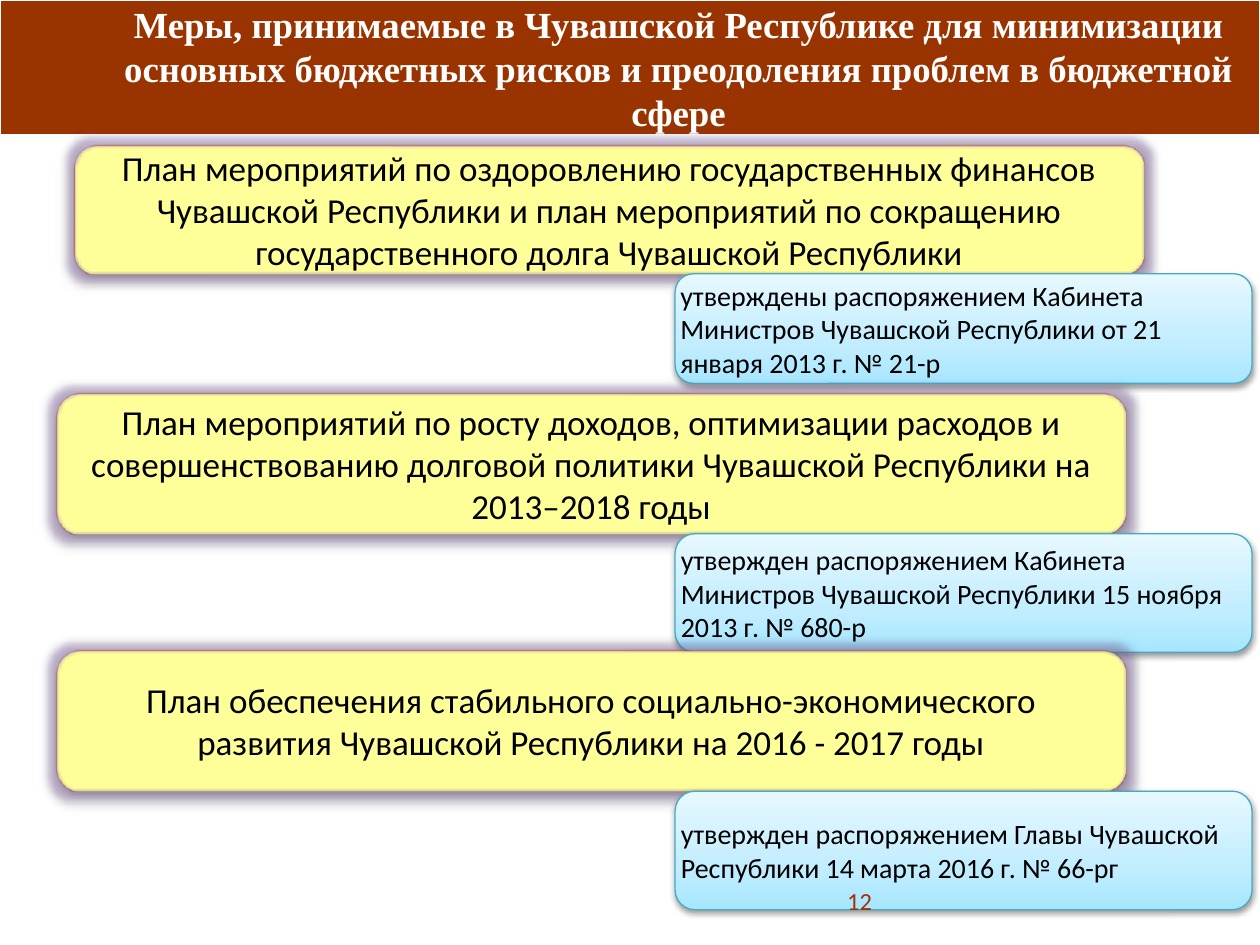
import copy

import lxml.etree
import pptx
import pptx.dml.color
import pptx.enum.shapes
import pptx.enum.text
import pptx.oxml
import pptx.oxml.ns
import pptx.util

Cm, Pt = pptx.util.Cm, pptx.util.Pt
RGBColor = pptx.dml.color.RGBColor
SHAPE = pptx.enum.shapes.MSO_SHAPE
ALIGN = pptx.enum.text.PP_ALIGN
qn = pptx.oxml.ns.qn

BROWN = RGBColor(0x99, 0x33, 0x00)
NUMBER_BROWN = RGBColor(0xA0, 0x32, 0x02)
WHITE = RGBColor(0xFF, 0xFF, 0xFF)
BLACK = RGBColor(0, 0, 0)
YELLOW = RGBColor(0xFF, 0xFF, 0x99)
RED_LINE = RGBColor(0xBF, 0x4C, 0x48)
BLUE_LINE = RGBColor(0x46, 0xAA, 0xC5)
GLOW = RGBColor(0x80, 0x64, 0xA2)
BLUE_STOPS = [(0, RGBColor(0xA7, 0xE6, 0xFF)),
              (0.35, RGBColor(0xC1, 0xED, 0xFF)),
              (1, RGBColor(0xE7, 0xF8, 0xFF))]

PLAN_WIDTH, DECREE_WIDTH = 21.56, 11.63

# left, top, plan height, decree height (cm), plan, decree
MEASURES = [
    (1.5, 2.92, 2.6, 2.21,
     "План мероприятий по оздоровлению государственных финансов Чувашской "
     "Республики и план мероприятий по сокращению государственного долга "
     "Чувашской Республики",
     "утверждены распоряжением Кабинета Министров Чувашской Республики "
     "от 21 января 2013 г. № 21-р"),
    (1.14, 7.92, 2.84, 2.39,
     "План мероприятий по росту доходов, оптимизации расходов и "
     "совершенствованию долговой политики Чувашской Республики "
     "на 2013–2018 годы",
     "утвержден распоряжением Кабинета Министров Чувашской Республики "
     "15 ноября 2013 г. № 680-р"),
    (1.14, 13.11, 2.84, 2.39,
     "План обеспечения стабильного социально-экономического развития "
     "Чувашской Республики на 2016 - 2017 годы",
     "утвержден распоряжением Главы Чувашской Республики "
     "14 марта 2016 г. № 66-рг"),
]


def write(s, text, size, color, align, font="Calibri", bold=False):
    tf = s.text_frame
    tf.word_wrap = True
    tf.auto_size = pptx.enum.text.MSO_AUTO_SIZE.NONE
    tf.vertical_anchor = pptx.enum.text.MSO_ANCHOR.MIDDLE
    p = tf.paragraphs[0]
    p.text = text
    p.alignment = align
    p.font.name, p.font.size, p.font.bold = font, Pt(size), bold
    p.font.color.rgb = color
    return tf


def add_box(slide, kind, left, top, width, height, line):
    s = slide.shapes.add_shape(kind, Cm(left), Cm(top), Cm(width), Cm(height))
    s.shadow.inherit = False
    s.line.color.rgb = line
    s.line.width = Pt(0.75)
    return s


def add_effects(s, glow=False):
    """Soft shadow below the shape, optionally with a glow and soft edge."""
    halo = (f'<a:glow rad="101600"><a:srgbClr val="{GLOW}">'
            '<a:alpha val="40000"/></a:srgbClr></a:glow>') if glow else ""
    edge = '<a:softEdge rad="12700"/>' if glow else ""
    effects = pptx.oxml.parse_xml(
        f'<a:effectLst {pptx.oxml.ns.nsdecls("a")}>{halo}'
        '<a:outerShdw blurRad="40000" dist="20000" dir="5400000" rotWithShape="0">'
        f'<a:srgbClr val="{BLACK}"><a:alpha val="38000"/></a:srgbClr>'
        f'</a:outerShdw>{edge}</a:effectLst>')
    sp_pr = s._element.spPr
    sp_pr.replace(sp_pr.find(qn("a:effectLst")), effects)


def fill_gradient(s):
    s.fill.gradient()
    s.fill.gradient_angle = 90
    stops = s._element.spPr.find(".//" + qn("a:gsLst"))
    stops.append(copy.deepcopy(stops[0]))
    for stop, (position, color) in zip(s.fill.gradient_stops, BLUE_STOPS):
        stop.position = position
        stop.color.rgb = color


def add_header(slide, left, top, width, height):
    # Band behind the title
    band = add_box(slide, SHAPE.RECTANGLE, left, top, width, height, WHITE)
    band.fill.solid()
    band.fill.fore_color.rgb = BROWN
    slide.shapes._spTree.insert(2, band._element)
    # Title
    title = slide.shapes.title
    title.left, title.top = Cm(left + 2.11), Cm(top)
    title.width, title.height = Cm(width - 2.26), Cm(height)
    write(title, "Меры, принимаемые в Чувашской Республике для минимизации "
          "основных бюджетных рисков и преодоления проблем в бюджетной сфере",
          21, WHITE, ALIGN.CENTER, "Times New Roman", True)


def add_measure(slide, left, top, right, plan_height, decree_height, plan, decree):
    # Plan
    s = add_box(slide, SHAPE.ROUNDED_RECTANGLE, left, top,
                PLAN_WIDTH, plan_height, RED_LINE)
    s.fill.solid()
    s.fill.fore_color.rgb = YELLOW
    add_effects(s, glow=True)
    write(s, plan, 20, BLACK, ALIGN.CENTER)
    # Decree that approved it, below and flush right
    s = add_box(slide, SHAPE.ROUNDED_RECTANGLE, right - DECREE_WIDTH,
                top + plan_height, DECREE_WIDTH, decree_height, BLUE_LINE)
    fill_gradient(s)
    add_effects(s)
    tf = write(s, decree, 16, BLACK, ALIGN.LEFT)
    tf.margin_left = tf.margin_right = tf.margin_top = tf.margin_bottom = 0


def add_page_number(slide, left, top, width, height):
    s = slide.shapes.add_textbox(Cm(left), Cm(top), Cm(width), Cm(height))
    write(s, "12", 14, NUMBER_BROWN, ALIGN.RIGHT)


def main():
    prs = pptx.Presentation()
    prs.slide_width, prs.slide_height = Cm(25.4), Cm(19.05)
    slide = prs.slides.add_slide(prs.slide_layouts[5])
    add_header(slide, 0, 0, 25.4, 2.72)
    for left, top, plan_height, decree_height, plan, decree in MEASURES:
        add_measure(slide, left, top, 25.24, plan_height, decree_height, plan, decree)
    add_page_number(slide, 14.91, 17.65, 2.92, 1.02)
    prs.save("out.pptx")


if __name__ == "__main__":
    main()
